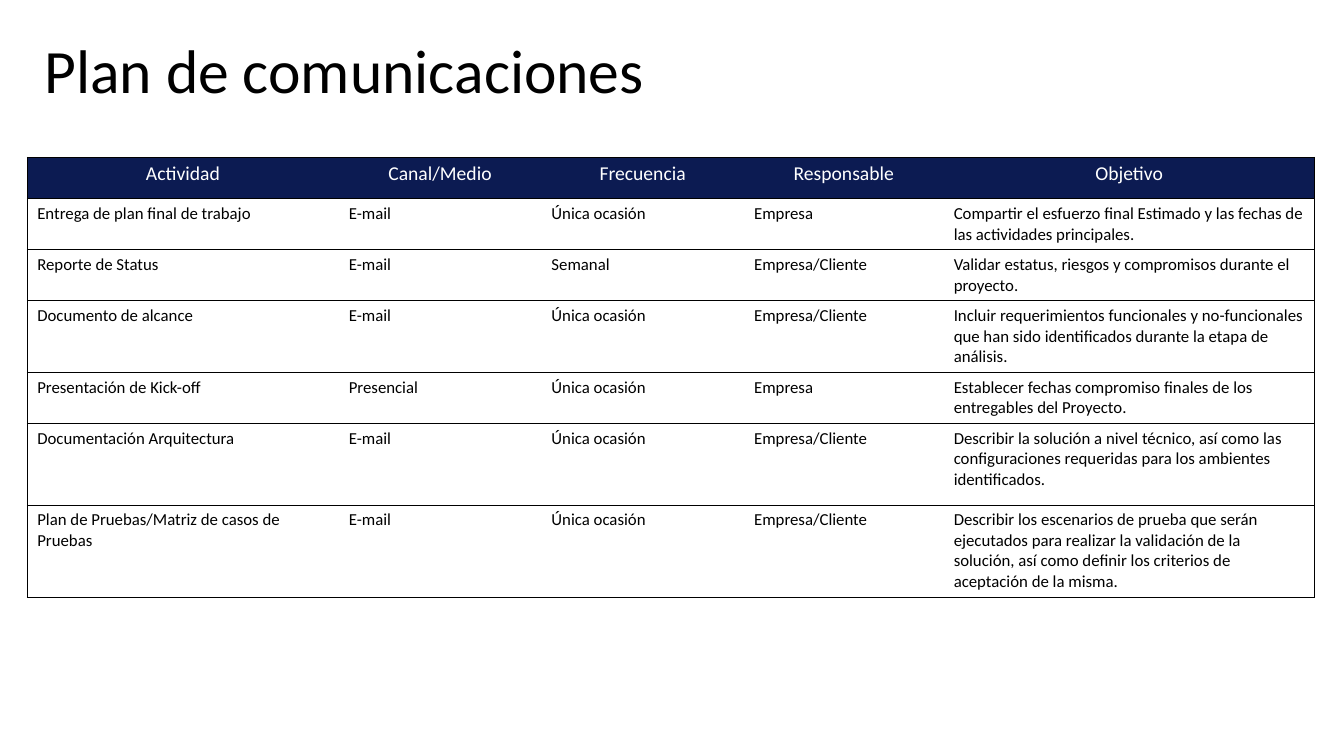
import dataclasses
import typing

import lxml.etree
import pptx
import pptx.dml.color
import pptx.enum.text
import pptx.oxml.ns
import pptx.slide
import pptx.table
import pptx.util


@dataclasses.dataclass(frozen=True)
class Theme:
    font: str = "Calibri"
    ink: str = "000000"
    paper: str = "FFFFFF"
    navy: str = "0C1B52"
    title: int = 44
    head: int = 14
    body: int = 12
    line: float = 0.5


@dataclasses.dataclass(frozen=True)
class Grid:
    cols: int = 1333
    rows: int = 750
    unit: int = pptx.util.Inches(0.01)

    def span(self, count: int) -> pptx.util.Emu:
        return pptx.util.Emu(count * self.unit)


@dataclasses.dataclass(frozen=True)
class Box:
    left: int
    top: int
    width: int
    height: int


@dataclasses.dataclass(frozen=True)
class Column:
    name: str
    width: int


class Task(typing.NamedTuple):
    name: str
    canal: str
    often: str
    owner: str
    goal: str
    height: int


THEME = Theme()
GRID = Grid()
TITLE = Box(34, 0, 1150, 145)
PLAN = Box(27, 156, 1279, 432)
HEAD = 41
ONCE = "Única ocasión"
FIRM = "Empresa"
BOTH = f"{FIRM}/Cliente"

COLUMNS = [
    Column("Actividad", 309),
    Column("Canal/Medio", 201),
    Column("Frecuencia", 201),
    Column("Responsable", 198),
    Column("Objetivo", 368),
]

TASKS = [
    Task("Entrega de plan final de trabajo", "E-mail", ONCE, FIRM,
         "Compartir el esfuerzo final Estimado y las fechas de las actividades principales.", 50),
    Task("Reporte de Status", "E-mail", "Semanal", BOTH,
         "Validar estatus, riesgos y compromisos durante el proyecto.", 50),
    Task("Documento de alcance", "E-mail", ONCE, BOTH,
         "Incluir requerimientos funcionales y no-funcionales que han sido identificados "
         "durante la etapa de análisis.", 70),
    Task("Presentación de Kick-off", "Presencial", ONCE, FIRM,
         "Establecer fechas compromiso finales de los entregables del Proyecto.", 50),
    Task("Documentación Arquitectura", "E-mail", ONCE, BOTH,
         "Describir la solución a nivel técnico, así como las configuraciones requeridas "
         "para los ambientes identificados.", 81),
    Task("Plan de Pruebas/Matriz de casos de Pruebas", "E-mail", ONCE, BOTH,
         "Describir los escenarios de prueba que serán ejecutados para realizar la validación "
         "de la solución, así como definir los criterios de aceptación de la misma.", 90),
]


def color(code: str) -> pptx.dml.color.RGBColor:
    return pptx.dml.color.RGBColor.from_string(code)


def write(frame, text: str, size: int, ink: str, align) -> None:
    para = frame.paragraphs[0]
    para.alignment = align
    run = para.add_run()
    run.text = text
    run.font.name = THEME.font
    run.font.size = pptx.util.Pt(size)
    run.font.bold = False
    run.font.color.rgb = color(ink)


def border(cell, sides: str) -> None:
    props = cell._tc.get_or_add_tcPr()
    qn = pptx.oxml.ns.qn
    for spot, side in enumerate("LRTB"):
        line = lxml.etree.Element(qn(f"a:ln{side}"))
        if side in sides:
            line.set("w", str(pptx.util.Pt(THEME.line)))
            fill = lxml.etree.SubElement(line, qn("a:solidFill"))
            lxml.etree.SubElement(fill, qn("a:srgbClr"), val=THEME.ink)
        else:
            lxml.etree.SubElement(line, qn("a:noFill"))
        props.insert(spot, line)


def fill_row(table: pptx.table.Table, row: int, texts: typing.Sequence[str]) -> None:
    head = row == 0
    last = len(texts) - 1
    for col, text in enumerate(texts):
        cell = table.cell(row, col)
        if head:
            cell.fill.solid()
            cell.fill.fore_color.rgb = color(THEME.navy)
        else:
            cell.fill.background()
        border(cell, "TB" + "L" * (col == 0) + "R" * (col == last))
        align = pptx.enum.text.PP_ALIGN
        write(cell.text_frame, text,
              THEME.head if head else THEME.body,
              THEME.paper if head else THEME.ink,
              align.CENTER if head else align.LEFT)


def add_title(slide: pptx.slide.Slide, text: str) -> None:
    title = slide.shapes.title
    title.left, title.top, title.width, title.height = map(
        GRID.span, dataclasses.astuple(TITLE))
    frame = title.text_frame
    frame.vertical_anchor = pptx.enum.text.MSO_ANCHOR.MIDDLE
    write(frame, text, THEME.title, THEME.ink, pptx.enum.text.PP_ALIGN.LEFT)
    frame.paragraphs[0].line_spacing = 0.9


def add_plan(slide: pptx.slide.Slide) -> None:
    place = map(GRID.span, dataclasses.astuple(PLAN))
    table = slide.shapes.add_table(len(TASKS) + 1, len(COLUMNS), *place).table
    table.horz_banding = False
    for col, item in zip(table.columns, COLUMNS):
        col.width = GRID.span(item.width)
    for row, height in zip(table.rows, [HEAD, *(task.height for task in TASKS)]):
        row.height = GRID.span(height)
    fill_row(table, 0, [item.name for item in COLUMNS])
    for row, task in enumerate(TASKS, 1):
        fill_row(table, row, task[:-1])


def main() -> None:
    deck = pptx.Presentation()
    deck.slide_width = GRID.span(GRID.cols)
    deck.slide_height = GRID.span(GRID.rows)
    slide = deck.slides.add_slide(deck.slide_layouts.get_by_name("Title Only"))
    add_title(slide, "Plan de comunicaciones")
    add_plan(slide)
    deck.save("out.pptx")


if __name__ == "__main__":
    main()
